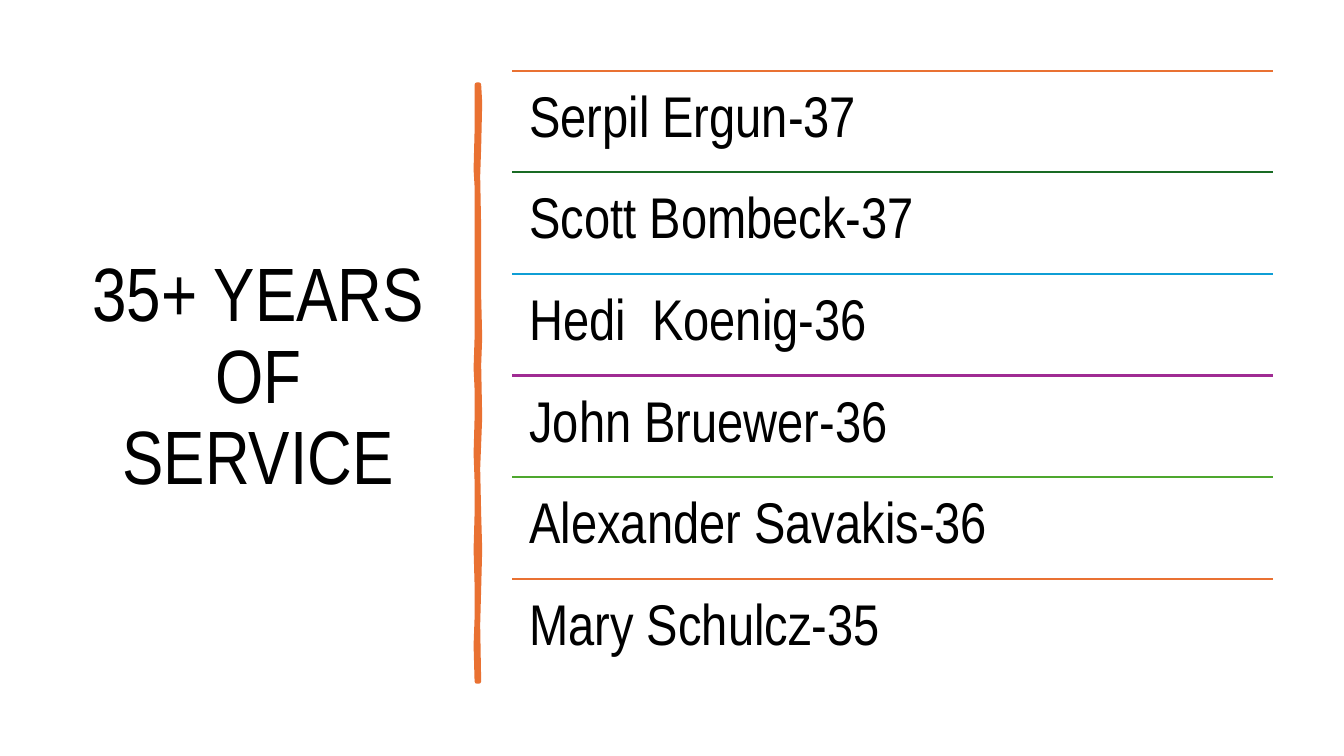
import pptx
import pptx.util
import pptx.dml.color
import pptx.enum.text
import pptx.enum.shapes
import pptx.oxml.ns
import lxml.etree

Inches, Pt = pptx.util.Inches, pptx.util.Pt
RGB = pptx.dml.color.RGBColor
ALIGN = pptx.enum.text.PP_ALIGN
ANCHOR = pptx.enum.text.MSO_ANCHOR

BLACK = RGB(0x00, 0x00, 0x00)
ORANGE = RGB(0xE9, 0x71, 0x32)
GREEN = RGB(0x19, 0x6B, 0x24)
BLUE = RGB(0x0F, 0x9E, 0xD5)
PURPLE = RGB(0xA0, 0x2B, 0x93)
LIME = RGB(0x4E, 0xA7, 0x2E)
FONT = "Arial Narrow"

STAFF = [
    ("Serpil Ergun-37", ORANGE),
    ("Scott Bombeck-37", GREEN),
    ("Hedi  Koenig-36", BLUE),
    ("John Bruewer-36", PURPLE),
    ("Alexander Savakis-36", LIME),
    ("Mary Schulcz-35", ORANGE),
]

# Grid of the name list, in inches
LEFT, TOP, WIDTH, HEIGHT = 5.08, 0.7, 7.55, 6.05
ROW = HEIGHT / len(STAFF)
INSET = 0.17

# Edges of the hand-drawn bar, (x, y) in inches
RIGHT_EDGE = [
    (4.75, 0.84), (4.76, 1.02), (4.75, 1.46), (4.74, 1.75), (4.75, 2.26),
    (4.75, 2.94), (4.76, 3.35), (4.75, 3.62), (4.76, 4.14), (4.75, 4.4),
    (4.74, 4.65), (4.75, 5.1), (4.76, 5.45), (4.75, 5.84), (4.74, 6.2),
    (4.75, 6.76),
]
LEFT_EDGE = [
    (4.73, 6.76), (4.72, 6.4), (4.73, 6.13), (4.73, 5.8), (4.72, 5.45),
    (4.73, 5.1), (4.73, 4.77), (4.72, 4.5), (4.73, 4.15), (4.73, 3.86),
    (4.72, 3.65), (4.73, 3.35), (4.73, 2.5), (4.73, 2.1), (4.73, 1.85),
    (4.72, 1.68), (4.73, 1.3), (4.73, 0.84),
]


def style(frame, text, size, align, after=0):
    """Fill a frame with one paragraph in the slide's font."""
    frame.word_wrap = True
    frame.auto_size = pptx.enum.text.MSO_AUTO_SIZE.NONE
    frame.text = text
    para = frame.paragraphs[0]
    para.alignment = align
    para.line_spacing = 0.9
    para.space_after = Pt(after)
    for run in para.runs:
        run.font.name = FONT
        run.font.size = Pt(size)
        run.font.color.rgb = BLACK


def set_title(slide):
    title = slide.shapes.title
    title.left, title.top = Inches(0.69), Inches(TOP)
    title.width, title.height = Inches(3.74), Inches(6.11)
    style(title.text_frame, "35+ YEARS OF SERVICE", 54, ALIGN.CENTER)
    title.text_frame.vertical_anchor = ANCHOR.MIDDLE


def add_bar(slide):
    points = [(Inches(x), Inches(y)) for x, y in RIGHT_EDGE + LEFT_EDGE]
    pen = slide.shapes.build_freeform(*points[0])
    pen.add_line_segments(points[1:], close=True)
    bar = pen.convert_to_shape()
    bar.shadow.inherit = False
    bar.fill.solid()
    bar.fill.fore_color.rgb = ORANGE
    bar.line.color.rgb = ORANGE
    bar.line.width = Pt(3.25)


def add_rule(slide, top, color):
    rule = slide.shapes.add_connector(
        pptx.enum.shapes.MSO_CONNECTOR.STRAIGHT,
        Inches(LEFT), Inches(top), Inches(LEFT + WIDTH), Inches(top))
    rule.line.color.rgb = color
    rule.line.width = Pt(1.5)
    props = rule._element.spPr
    lxml.etree.SubElement(props, pptx.oxml.ns.qn("a:effectLst"))


def add_name(slide, top, text):
    box = slide.shapes.add_textbox(
        Inches(LEFT), Inches(top), Inches(WIDTH), Inches(ROW))
    frame = box.text_frame
    style(frame, text, 41, ALIGN.LEFT, after=14)
    frame.vertical_anchor = ANCHOR.TOP
    frame.margin_left = frame.margin_right = Inches(INSET)
    frame.margin_top = frame.margin_bottom = Inches(INSET)


def main():
    deck = pptx.Presentation()
    deck.slide_width, deck.slide_height = Inches(13.33), Inches(7.5)
    slide = deck.slides.add_slide(deck.slide_layouts.get_by_name("Title Only"))
    set_title(slide)
    add_bar(slide)
    for index, (name, color) in enumerate(STAFF):
        top = TOP + index * ROW
        add_rule(slide, top, color)
        add_name(slide, top, name)
    deck.save("out.pptx")


if __name__ == "__main__":
    main()
